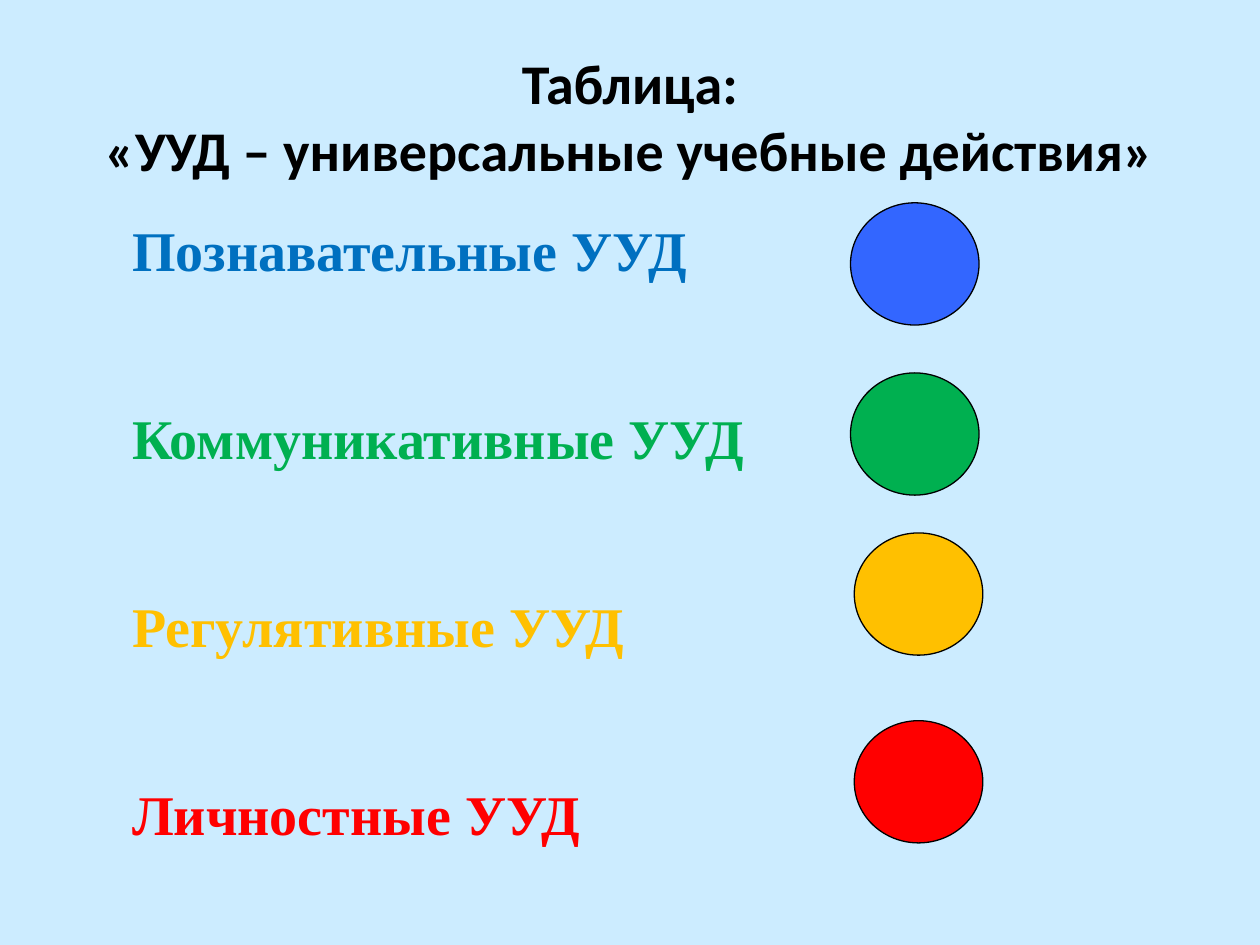
import pptx
import pptx.dml.color
import pptx.enum.shapes
import pptx.enum.text
import pptx.util
from pptx.util import Inches

ACTIONS = [
    # label, text colour, circle colour, circle left, circle top
    ("Познавательные УУД", "0070C0", "3366FF", 6.75, 1.61),
    ("Коммуникативные УУД", "00B050", "00B050", 6.75, 2.96),
    ("Регулятивные УУД", "FFC000", "FFC000", 6.78, 4.23),
    ("Личностные УУД", "FF0000", "FF0000", 6.78, 5.72),
]


def color(hex_value):
    return pptx.dml.color.RGBColor.from_string(hex_value)


def format_runs(para, font_name, hex_value):
    for span in para.runs:
        span.font.name = font_name
        span.font.size = pptx.util.Pt(32)
        span.font.bold = True
        span.font.color.rgb = color(hex_value)


def add_title(page, left, top, width, height):
    box = page.shapes.add_textbox(left, top, width, height)
    frame = box.text_frame
    frame.word_wrap = True
    frame.vertical_anchor = pptx.enum.text.MSO_ANCHOR.MIDDLE
    frame.text = "Таблица:\v«УУД – универсальные учебные действия»"
    para = frame.paragraphs[0]
    para.alignment = pptx.enum.text.PP_ALIGN.CENTER
    format_runs(para, "Calibri", "000000")


def add_labels(page, left, top, width, height):
    box = page.shapes.add_textbox(left, top, width, height)
    frame = box.text_frame
    frame.word_wrap = True
    frame.margin_top = Inches(0.1)
    frame.text = "\n".join(action[0] for action in ACTIONS)
    for para, action in zip(frame.paragraphs, ACTIONS):
        para.space_after = pptx.util.Pt(69)
        format_runs(para, "Times New Roman", action[1])


def add_circle(page, left, top, width, height, fill):
    circle = page.shapes.add_shape(
        pptx.enum.shapes.MSO_SHAPE.OVAL, left, top, width, height)
    circle.shadow.inherit = False
    circle.fill.solid()
    circle.fill.fore_color.rgb = color(fill)
    circle.line.color.rgb = color("000000")
    circle.line.width = pptx.util.Pt(0.75)


def main():
    deck = pptx.Presentation()
    deck.slide_width, deck.slide_height = Inches(10), Inches(7.5)
    page = deck.slides.add_slide(deck.slide_layouts[6])
    page.background.fill.solid()
    page.background.fill.fore_color.rgb = color("CCECFF")
    add_title(page, Inches(0.5), Inches(0.3), Inches(9), Inches(1.24))
    add_labels(page, Inches(0.95), Inches(1.61), Inches(5.59), Inches(5.08))
    for _, _, fill, left, top in ACTIONS:
        add_circle(page, Inches(left), Inches(top), Inches(1.02), Inches(0.97), fill)
    deck.save("out.pptx")


if __name__ == "__main__":
    main()
